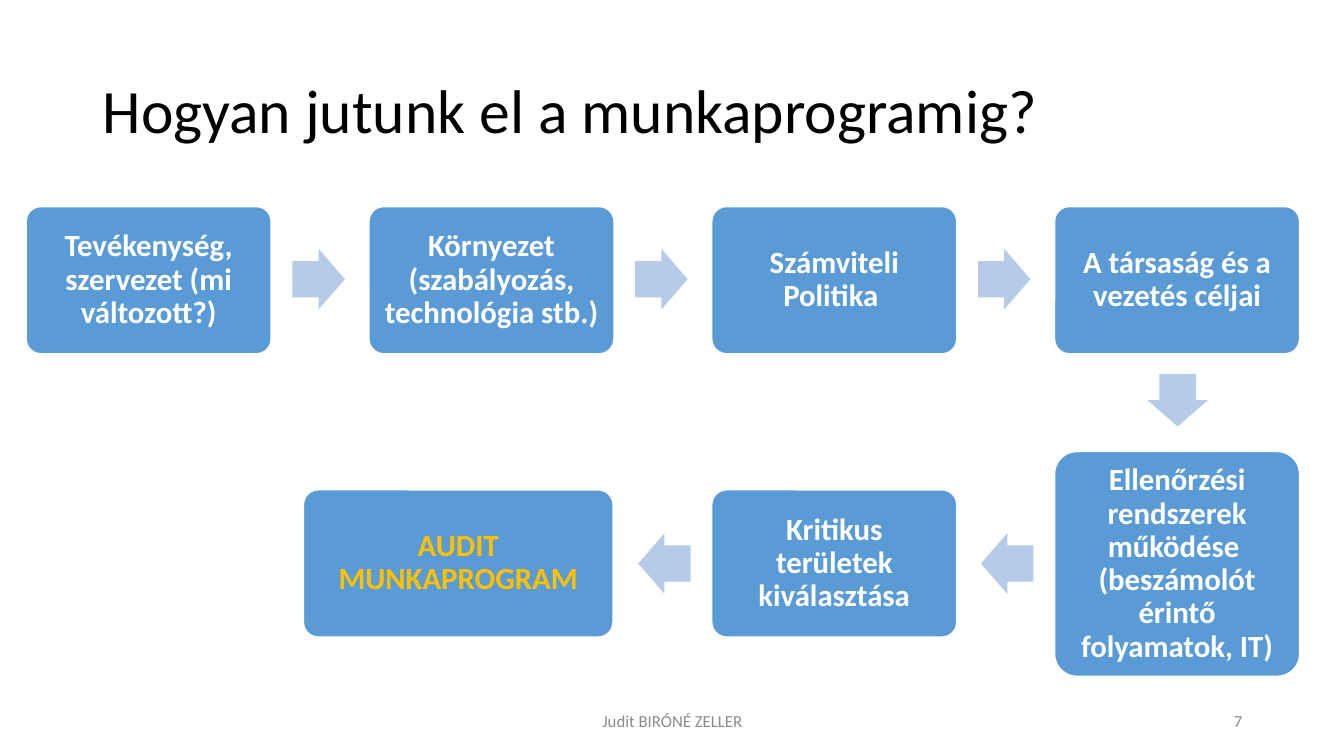
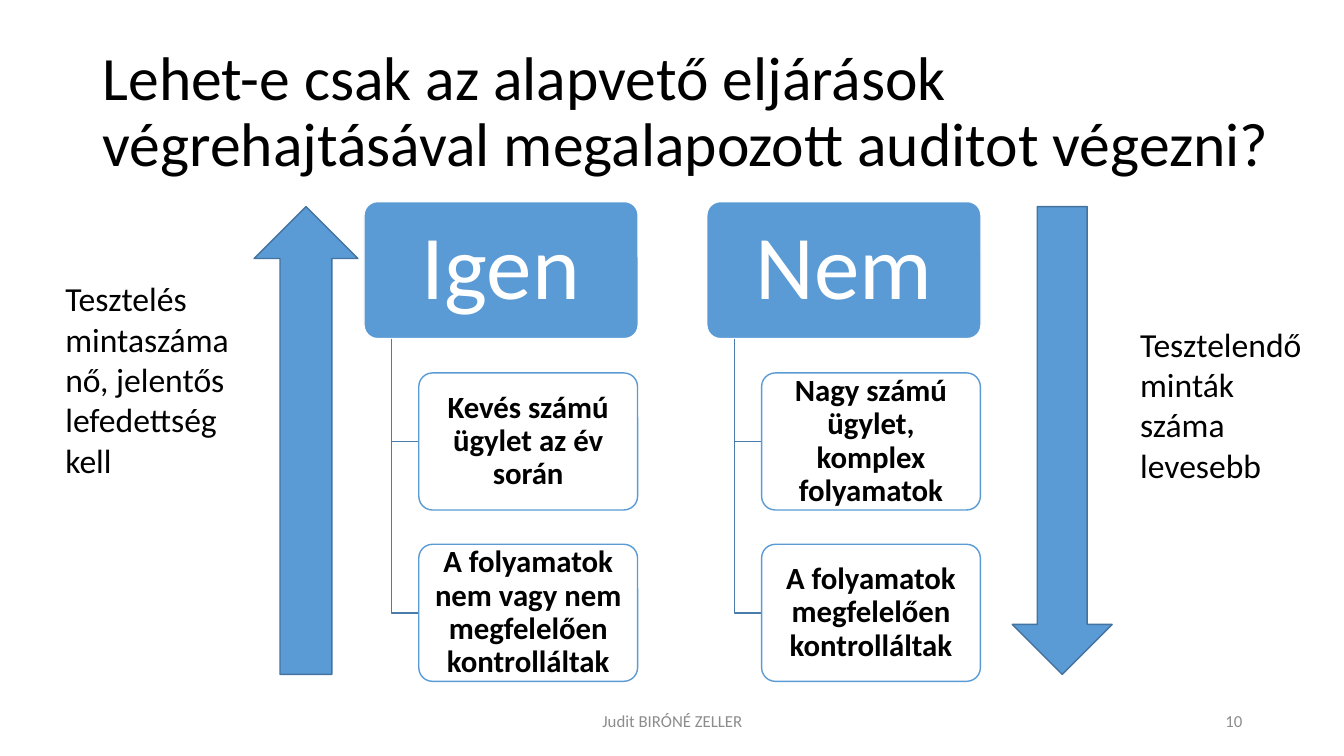
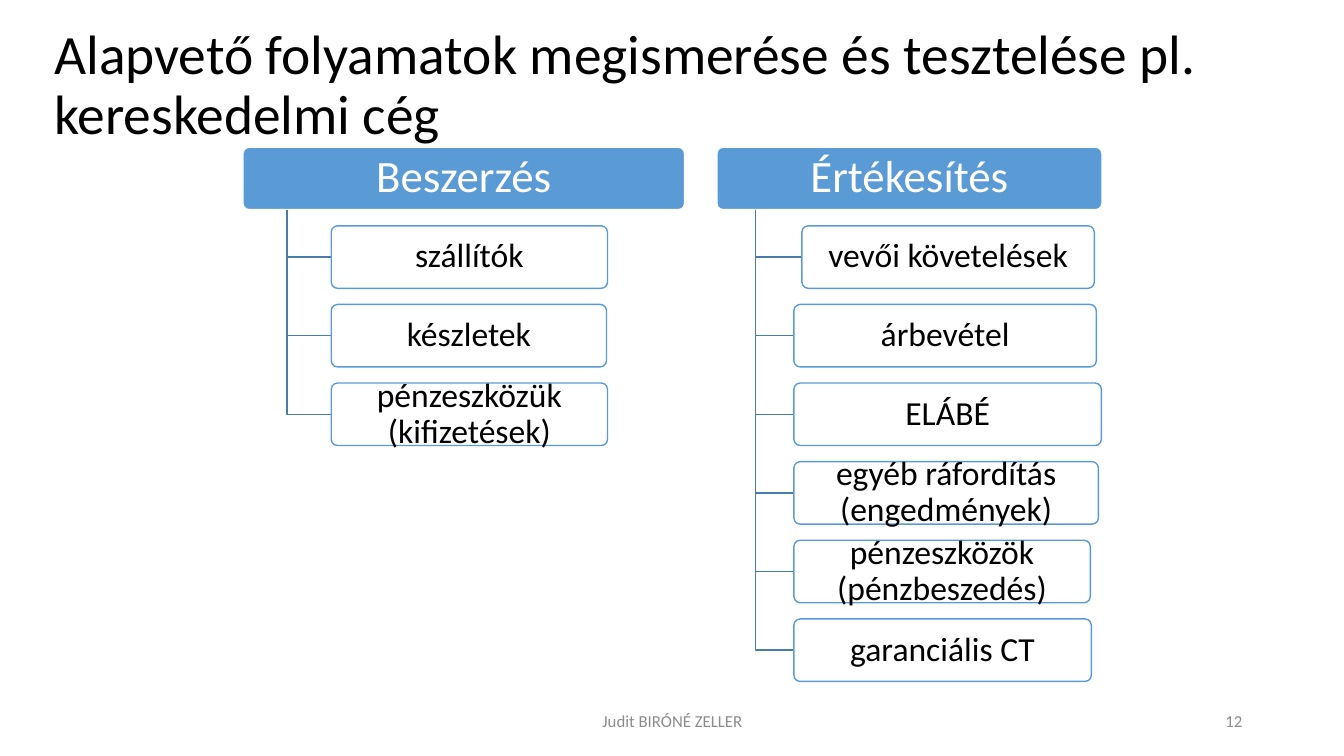
import pptx
import pptx.util
import pptx.dml.color
import pptx.enum.shapes
import pptx.enum.text

Inches = pptx.util.Inches
Pt = pptx.util.Pt
rgb = pptx.dml.color.RGBColor.from_string
SHAPE = pptx.enum.shapes.MSO_SHAPE
ALIGN = pptx.enum.text.PP_ALIGN
ANCHOR = pptx.enum.text.MSO_ANCHOR

FONT = "Calibri"
BLUE, PALE_BLUE, EDGE_BLUE, BRANCH_BLUE = "5B9BD5", "B5CBE7", "43739E", "497CAB"
WHITE, BLACK, GREY, GOLD = "FFFFFF", "000000", "8C8C8C", "FFC000"


def draw(s, kind, box, fill, line=None, adjustments=()):
    sp = s.shapes.add_shape(kind, *[Inches(v) for v in box])
    sp.shadow.inherit = False
    sp.fill.solid()
    sp.fill.fore_color.rgb = rgb(fill)
    if line:
        sp.line.color.rgb = rgb(line)
        sp.line.width = Pt(1)
    else:
        sp.line.fill.background()
    for i, value in enumerate(adjustments):
        sp.adjustments[i] = value
    return sp


def write(sp, text, size, color, bold=False, align=ALIGN.CENTER, anchor=ANCHOR.MIDDLE,
          spacing=0.9, insets=(0.1, 0.05)):
    """Fill a shape with one paragraph; insets are (sides, top and bottom)."""
    tf = sp.text_frame
    tf.word_wrap = True
    tf.vertical_anchor = anchor
    tf.margin_left = tf.margin_right = Inches(insets[0])
    tf.margin_top = tf.margin_bottom = Inches(insets[1])
    p = tf.paragraphs[0]
    p.text = text
    p.alignment = align
    p.line_spacing = spacing
    p.font.name = FONT
    p.font.size = Pt(size)
    p.font.bold = bold
    p.font.color.rgb = rgb(color)


prs = pptx.Presentation()
prs.slide_width, prs.slide_height = Inches(13.33), Inches(7.5)

# Titles and footers
pages = [
    ("Hogyan jutunk el a munkaprogramig?", (0.92, 0.4, 11.5, 1.45), 44, "7"),
    ("Lehet-e csak az alapvető eljárások végrehajtásával megalapozott auditot végezni?",
     (0.92, 0.4, 11.91, 1.45), 44, "10"),
    ("Alapvető folyamatok megismerése és tesztelése pl. kereskedelmi cég",
     (0.44, 0.4, 11.98, 0.91), 39.6, "12"),
]
slides = []
for title, title_box, title_size, number in pages:
    s = prs.slides.add_slide(prs.slide_layouts[6])
    slides.append(s)
    for text, box, size, color, align in [
        (title, title_box, title_size, BLACK, ALIGN.LEFT),
        ("Judit BIRÓNÉ ZELLER", (4.42, 6.95, 4.5, 0.4), 12, GREY, ALIGN.CENTER),
        (number, (9.42, 6.95, 3, 0.4), 12, GREY, ALIGN.RIGHT),
    ]:
        sp = s.shapes.add_textbox(*[Inches(v) for v in box])
        write(sp, text, size, color, align=align, spacing=0.9 if text == title else 1)
process, comparison, cycles = slides

# Steps to the audit programme
COLUMN = 3.4
columns = [0.26 + COLUMN * i for i in range(4)]
steps = [
    ("Tevékenység, szervezet (mi változott?)", (columns[0], 2.05, 2.43, 1.46), WHITE),
    ("Környezet (szabályozás, technológia stb.)", (columns[1], 2.05, 2.43, 1.46), WHITE),
    ("Számviteli Politika ", (columns[2], 2.05, 2.43, 1.46), WHITE),
    ("A társaság és a vezetés céljai", (columns[3], 2.05, 2.43, 1.46), WHITE),
    ("Ellenőrzési rendszerek működése  (beszámolót érintő folyamatok, IT)",
     (columns[3], 4.48, 2.43, 2.23), WHITE),
    ("Kritikus területek kiválasztása", (columns[2], 4.86, 2.43, 1.46), WHITE),
    ("AUDIT MUNKAPROGRAM", (3.01, 4.86, 3.07, 1.46), GOLD),
]
for text, box, color in steps:
    sp = draw(process, SHAPE.ROUNDED_RECTANGLE, box, BLUE, WHITE, [0.1])
    write(sp, text, 22, color, bold=True, insets=(0.09, 0.09))

arrows = [(2.9 + COLUMN * i, 2.47, 0) for i in range(3)]
arrows += [(11.42, 3.67, 90)]
arrows += [(9.73 - COLUMN * i, 5.29, 180) for i in range(2)]
for left, top, rotation in arrows:
    sp = draw(process, SHAPE.RIGHT_ARROW, (left, top, 0.52, 0.6), PALE_BLUE,
              adjustments=[0.6, 0.5])
    sp.rotation = rotation

# Trees: a heading with branches; each item is text, width, extra indent
pair_style = dict(top=2, height=1.36, pitch=1.7, head_size=65, head_insets=(0.14, 0.09),
                  size=22, bold=True)
list_style = dict(top=1.46, height=0.62, pitch=0.78, head_size=32, head_insets=(0.07, 0.04),
                  size=24, bold=False)
trees = [
    (comparison, pair_style, "Igen", 3.61, 2.72, [
        ("Kevés számú ügylet az év során", 2.17, 0),
        ("A folyamatok nem vagy nem megfelelően kontrolláltak", 2.17, 0),
    ]),
    (comparison, pair_style, "Nem", 7.01, 2.72, [
        ("Nagy számú ügylet, komplex folyamatok", 2.17, 0),
        ("A folyamatok megfelelően kontrolláltak", 2.17, 0),
    ]),
    (cycles, list_style, "Beszerzés", 2.41, 4.38, [
        ("szállítók", 2.74, 0),
        ("készletek", 2.73, 0),
        ("pénzeszközük (kifizetések)", 2.74, 0),
    ]),
    (cycles, list_style, "Értékesítés", 7.11, 3.82, [
        ("vevői követelések", 2.9, 0.08),
        ("árbevétel", 3, 0),
        ("ELÁBÉ", 3.05, 0),
        ("egyéb ráfordítás (engedmények)", 3.02, 0),
        ("pénzeszközök\n(pénzbeszedés)", 2.94, 0),
        ("garanciális CT", 2.95, 0),
    ]),
]
for s, style, heading, left, width, items in trees:
    top, height = style["top"], style["height"]
    sp = draw(s, SHAPE.ROUNDED_RECTANGLE, (left, top, width, height), BLUE, WHITE, [0.1])
    write(sp, heading, style["head_size"], WHITE, insets=style["head_insets"])
    trunk = left + 0.1 * width
    for i, (text, item_width, indent) in enumerate(items, 1):
        item_left = left + 0.2 * width + indent
        item_top = top + style["pitch"] * i
        middle = item_top + height / 2
        branch = s.shapes.build_freeform(Inches(trunk), Inches(top + height))
        branch.add_line_segments([(Inches(trunk), Inches(middle)),
                                  (Inches(item_left), Inches(middle))], close=False)
        sp = branch.convert_to_shape()
        sp.shadow.inherit = False
        sp.fill.background()
        sp.line.color.rgb = rgb(BRANCH_BLUE)
        sp.line.width = Pt(1)
        sp = draw(s, SHAPE.ROUNDED_RECTANGLE, (item_left, item_top, item_width, height),
                  WHITE, BLUE, [0.1])
        write(sp, text, style["size"], BLACK, bold=style["bold"], insets=(0.05, 0.03))

# Arrows and remarks beside the comparison
draw(comparison, SHAPE.DOWN_ARROW, (10.04, 2.05, 0.99, 4.64), BLUE, EDGE_BLUE)
draw(comparison, SHAPE.UP_ARROW, (2.52, 2.05, 1.03, 4.64), BLUE, EDGE_BLUE)
for text, box in [
    ("Tesztelés mintaszáma nő, jelentős lefedettség kell", (0.55, 2.71, 1.97, 2.12)),
    ("Tesztelendő minták száma  levesebb", (11.21, 3.16, 1.87, 1.72)),
]:
    sp = comparison.shapes.add_textbox(*[Inches(v) for v in box])
    write(sp, text, 24, BLACK, align=ALIGN.LEFT, anchor=ANCHOR.TOP, spacing=1)

prs.save("out.pptx")
